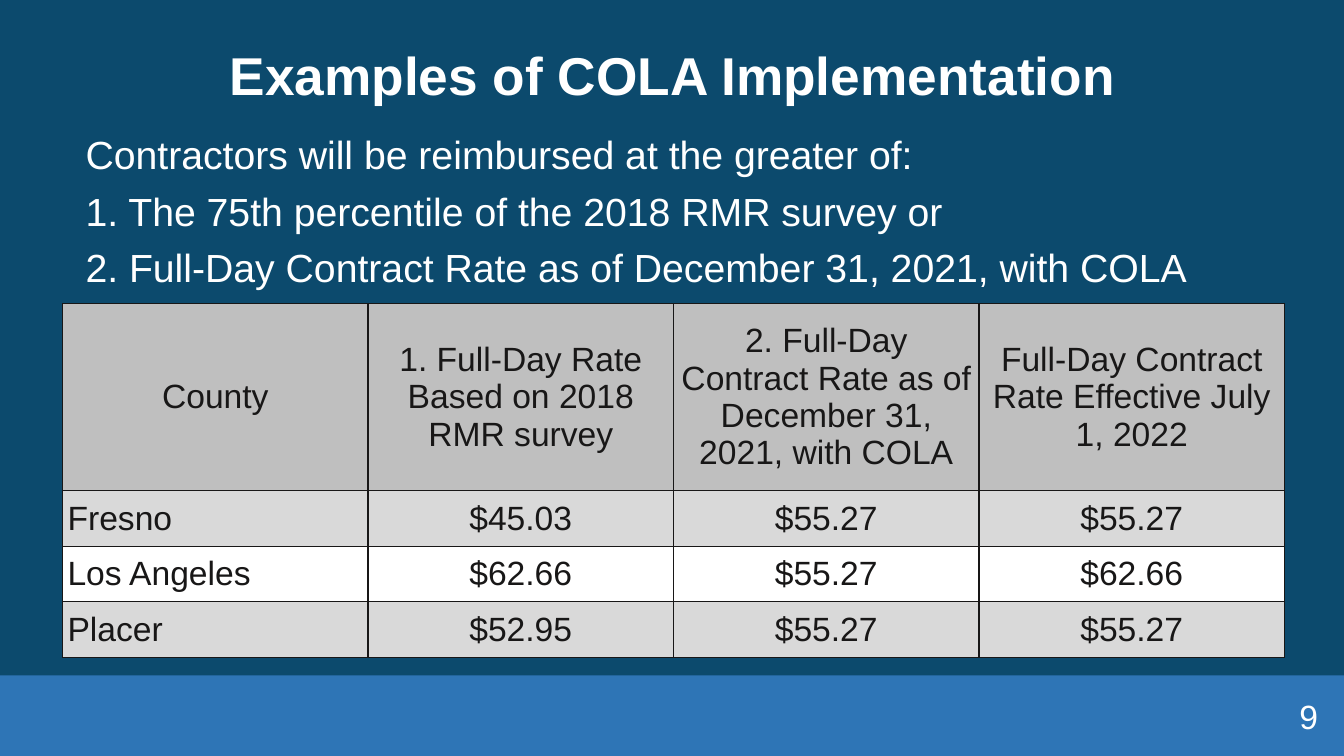
import pptx
import pptx.dml.color
import pptx.enum.shapes
import pptx.enum.text
import pptx.oxml
import pptx.oxml.ns
import pptx.util
from pptx.dml.color import RGBColor
from pptx.enum.text import MSO_ANCHOR, PP_ALIGN
from pptx.util import Inches, Pt

# Content
TITLE = "Examples of COLA Implementation"
RULES = [
    "Contractors will be reimbursed at the greater of:",
    "1. The 75th percentile of the 2018 RMR survey or",
    "2. Full-Day Contract Rate as of December 31, 2021, with COLA",
]
RATES = [
    ("County", "1. Full-Day Rate Based on 2018 RMR survey",
     "2. Full-Day Contract Rate as of December 31, 2021, with COLA",
     "Full-Day Contract Rate Effective July 1, 2022"),
    ("Fresno", "$45.03", "$55.27", "$55.27"),
    ("Los Angeles", "$62.66", "$55.27", "$62.66"),
    ("Placer", "$52.95", "$55.27", "$55.27"),
]
PAGE_NUMBER = "9"

# Style
FONT = "Arial"
NAVY = RGBColor(0x0C, 0x4A, 0x6D)
BLUE = RGBColor(0x2E, 0x75, 0xB6)
WHITE = RGBColor(0xFF, 0xFF, 0xFF)
INK = RGBColor(0x18, 0x17, 0x17)
HEADER_GRAY = RGBColor(0xBF, 0xBF, 0xBF)
ROW_GRAY = RGBColor(0xD9, 0xD9, 0xD9)
WIDTH, HEIGHT, BAND_HEIGHT = 13.33, 7.5, 0.8
COLUMN_WIDTH, HEADER_HEIGHT, ROW_HEIGHT = 3.03, 1.86, 0.55
CELL_MARGIN = Inches(0.05)


def format_text(frame, size, color, align, bold=False):
    for para in frame.paragraphs:
        para.alignment = align
        for span in para.runs:
            span.font.name = FONT
            span.font.size = Pt(size)
            span.font.bold = bold
            span.font.color.rgb = color


def place(box, left, top, width, height):
    box.left, box.top = Inches(left), Inches(top)
    box.width, box.height = Inches(width), Inches(height)


def add_text(page, text, area, size, align, anchor):
    box = page.shapes.add_textbox(*map(Inches, area))
    frame = box.text_frame
    frame.word_wrap = True
    frame.vertical_anchor = anchor
    frame.text = text
    format_text(frame, size, WHITE, align)
    return frame


def add_borders(cell):
    properties = cell._tc.get_or_add_tcPr()
    for index, side in enumerate(("lnL", "lnR", "lnT", "lnB")):
        line = pptx.oxml.parse_xml(
            f'<a:{side} {pptx.oxml.ns.nsdecls("a")} w="{Pt(1)}">'
            f'<a:solidFill><a:srgbClr val="{INK}"/></a:solidFill></a:{side}>')
        properties.insert(index, line)


def add_rate_table(page):
    rows, columns = len(RATES), len(RATES[0])
    heights = [HEADER_HEIGHT] + [ROW_HEIGHT] * (rows - 1)
    table = page.shapes.add_table(
        rows, columns, Inches(0.62), Inches(3.01),
        Inches(COLUMN_WIDTH * columns), Inches(sum(heights))).table
    for column in table.columns:
        column.width = Inches(COLUMN_WIDTH)
    for r, values in enumerate(RATES):
        table.rows[r].height = Inches(heights[r])
        fill = HEADER_GRAY if r == 0 else ROW_GRAY if r % 2 else WHITE
        for c, value in enumerate(values):
            cell = table.cell(r, c)
            cell.text = value
            cell.vertical_anchor = MSO_ANCHOR.MIDDLE
            cell.margin_left = cell.margin_right = CELL_MARGIN
            cell.margin_top = cell.margin_bottom = CELL_MARGIN
            cell.fill.solid()
            cell.fill.fore_color.rgb = fill
            align = PP_ALIGN.LEFT if r and c == 0 else PP_ALIGN.CENTER
            format_text(cell.text_frame, 24, INK, align)
            add_borders(cell)


def main():
    deck = pptx.Presentation()
    deck.slide_width, deck.slide_height = Inches(WIDTH), Inches(HEIGHT)
    page = deck.slides.add_slide(deck.slide_layouts[5])
    page.background.fill.solid()
    page.background.fill.fore_color.rgb = NAVY

    # Footer band
    band = page.shapes.add_shape(
        pptx.enum.shapes.MSO_SHAPE.RECTANGLE, 0, Inches(HEIGHT - BAND_HEIGHT),
        Inches(WIDTH), Inches(BAND_HEIGHT))
    band.shadow.inherit = False
    band.fill.solid()
    band.fill.fore_color.rgb = BLUE
    band.line.fill.background()

    # Title
    title = page.shapes.title
    place(title, 0.17, 0.05, 13, 1.45)
    title.text_frame.text = TITLE
    title.text_frame.vertical_anchor = MSO_ANCHOR.MIDDLE
    title.text_frame.paragraphs[0].line_spacing = 0.9
    format_text(title.text_frame, 38, WHITE, PP_ALIGN.CENTER, bold=True)

    # Reimbursement rules
    rules = add_text(page, "\n".join(RULES), (0.75, 1.3, 12.41, 1.72), 28,
                     PP_ALIGN.LEFT, MSO_ANCHOR.TOP)
    for para in rules.paragraphs:
        para.line_spacing = 0.9
        para.space_before = Pt(10)

    # Rates and page number
    add_rate_table(page)
    add_text(page, PAGE_NUMBER, (10.17, 6.9, 3, 0.4), 24,
             PP_ALIGN.RIGHT, MSO_ANCHOR.MIDDLE)

    deck.save("out.pptx")


if __name__ == "__main__":
    main()
